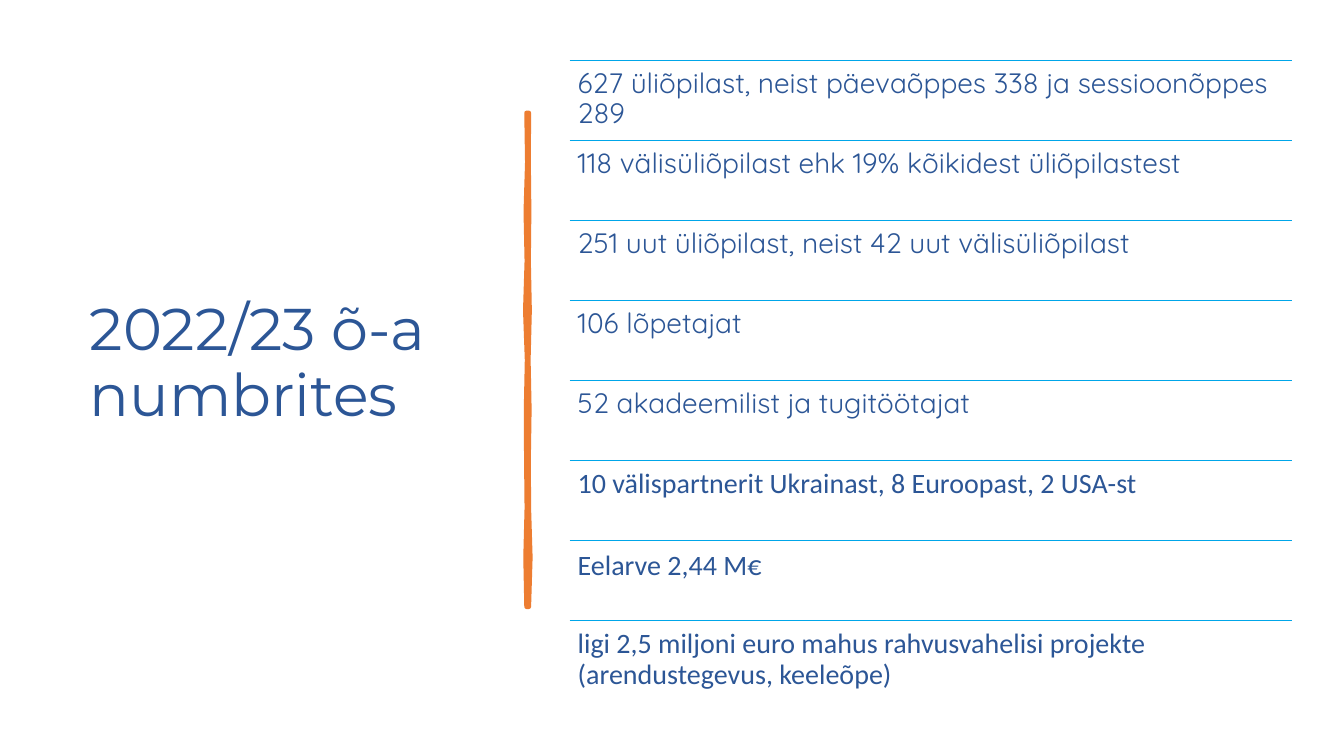
from pptx import Presentation, util as u
from pptx.dml.color import RGBColor
from pptx.enum import text
from pptx.enum.shapes import MSO_CONNECTOR
from pptx.oxml.ns import qn
from lxml import etree

COLORS = {"navy": "2C5696", "orange": "ED7D31", "sky": "00A6E9"}
FACTS = [
    ("627 üliõpilast, neist päevaõppes 338 ja sessioonõppes 289", "Quicksand", 0),
    ("118 välisüliõpilast ehk 19% kõikidest üliõpilastest", "Quicksand", 0),
    ("251 uut üliõpilast, neist 42 uut välisüliõpilast", "Quicksand", 0),
    ("106 lõpetajat", "Quicksand", 0),
    ("52 akadeemilist ja tugitöötajat", "Quicksand", 0),
    ("10 välispartnerit Ukrainast, 8 Euroopast, 2 USA-st", "Calibri", 0),
    ("Eelarve 2,44 M€", "Calibri", 0.02),
    ("ligi 2,5 miljoni euro mahus rahvusvahelisi projekte (arendustegevus, keeleõpe)", "Calibri", 0),
]
BRUSH_LEFT = [0.25, 0.4, 0.1, 0.3, 0, 0.35, 0.15, 0.2, 0.3, 0.05, 0.25]
BRUSH_RIGHT = [0.7, 0.65, 0.75, 0.65, 0.85, 0.6, 0.8, 0.65, 0.7, 1, 0.7]


def color(name):
    return RGBColor.from_string(COLORS[name])


def place(part, box):
    part.left, part.top, part.width, part.height = (u.Inches(side) for side in box)


def add_heading(slide, box):
    heading = slide.shapes.title
    place(heading, box)
    frame = heading.text_frame
    frame.word_wrap = True
    frame.auto_size = text.MSO_AUTO_SIZE.NONE
    frame.vertical_anchor = text.MSO_ANCHOR.MIDDLE
    paragraph = frame.paragraphs[0]
    paragraph.alignment = text.PP_ALIGN.LEFT
    paragraph.line_spacing = 0.9
    paragraph.font.name = "Montserrat"
    paragraph.font.color.rgb = color("navy")
    for words, size in (("2022/23 õ-a", 42), (" ", 50), ("numbrites", 42)):
        run = paragraph.add_run()
        run.text = words
        run.font.size = u.Pt(size)


def brush_edge(knots, box):
    left, top, width, height = (u.Inches(side) for side in box)
    middle_x, middle_y = left + width / 2, top + height / 2
    return [
        (middle_x + height * (knot / (len(knots) - 1) - 0.5), middle_y + width * (0.5 - share))
        for knot, share in enumerate(knots)
    ]


def add_brush_stroke(slide, box):
    outline = brush_edge(BRUSH_LEFT, box) + brush_edge(BRUSH_RIGHT, box)[::-1]
    builder = slide.shapes.build_freeform(*outline[0])
    builder.add_line_segments(outline[1:], close=True)
    stroke = builder.convert_to_shape()
    stroke.rotation = 90
    stroke.shadow.inherit = False
    stroke.fill.solid()
    stroke.fill.fore_color.rgb = color("orange")
    stroke.line.color.rgb = color("orange")
    stroke.line.width = u.Pt(3.25)


def add_fact(shapes, box, words, font_name, drop):
    left, top, width, height = (u.Inches(side) for side in box)
    rule = shapes.add_connector(MSO_CONNECTOR.STRAIGHT, left, top, left + width, top)
    rule.line.color.rgb = color("sky")
    rule.line.width = u.Pt(1)
    etree.SubElement(rule._element.spPr, qn("a:effectLst"))
    frame = shapes.add_textbox(left, top + u.Inches(drop), width, height).text_frame
    frame.word_wrap = True
    frame.margin_left = frame.margin_right = u.Inches(0.08)
    frame.margin_top = frame.margin_bottom = u.Inches(0.09)
    paragraph = frame.paragraphs[0]
    paragraph.text = words
    paragraph.line_spacing = 0.9
    paragraph.font.name = font_name
    paragraph.font.size = u.Pt(20)
    paragraph.font.color.rgb = color("navy")


def add_fact_list(slide, box):
    left, top, width, height = box
    row_height = height / len(FACTS)
    facts = slide.shapes.add_group_shape()
    for row, fact in enumerate(FACTS):
        add_fact(facts.shapes, (left, top + row * row_height, width, row_height), *fact)


def main():
    deck = Presentation()
    deck.slide_width, deck.slide_height = u.Inches(13.33), u.Inches(7.5)
    slide = deck.slides.add_slide(deck.slide_layouts[5])
    add_heading(slide, (0.79, 0.6, 4.07, 5.94))
    add_brush_stroke(slide, (5.21, 1.12, 0.05, 4.9))
    add_fact_list(slide, (5.65, 0.6, 7.16, 6.35))
    deck.save("out.pptx")


if __name__ == "__main__":
    main()
